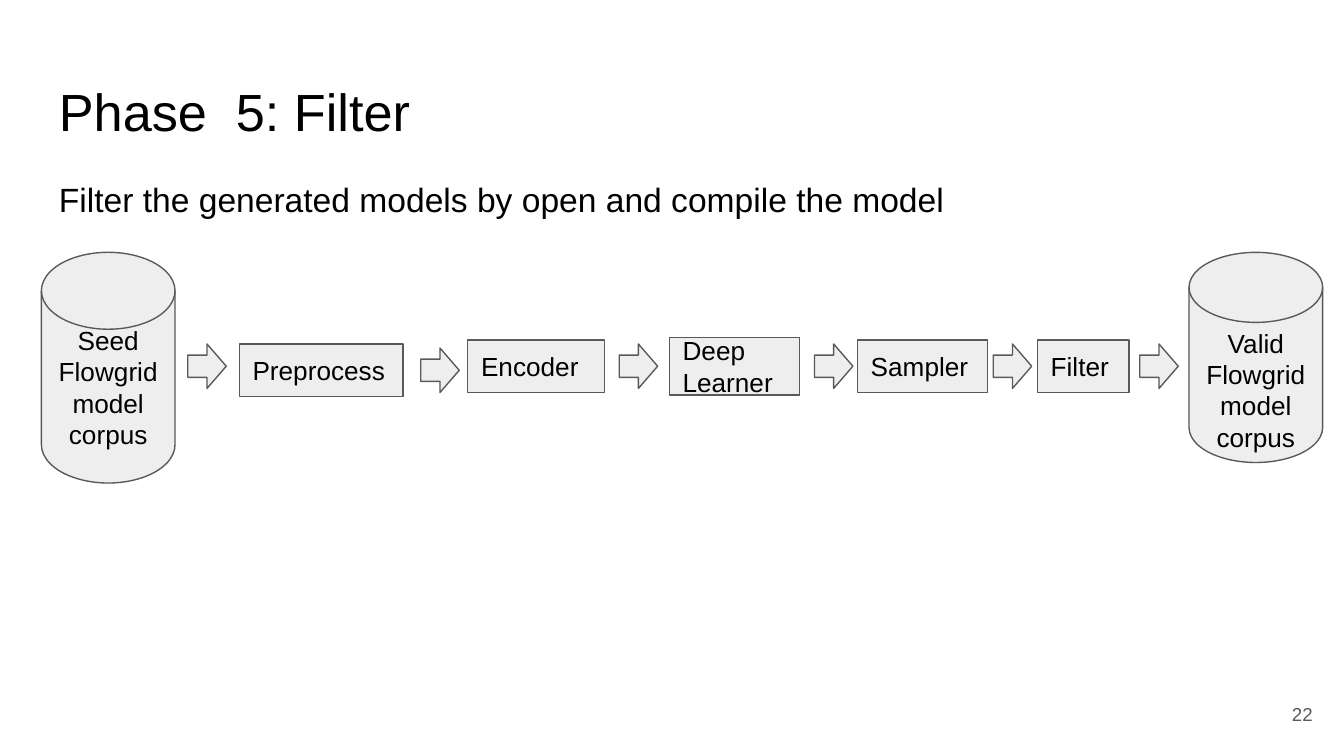
"""Build the Phase 5 filter slide with its pipeline diagram."""
from pptx import Presentation
from pptx.dml.color import RGBColor
from pptx.enum.shapes import MSO_SHAPE
from pptx.enum.text import MSO_ANCHOR, PP_ALIGN
from pptx.util import Pt

BLACK = RGBColor(0x00, 0x00, 0x00)
GRAY = RGBColor(0x59, 0x59, 0x59)
LIGHT_GRAY = RGBColor(0xEE, 0xEE, 0xEE)

FONT = "Arial"
INSET = 7.2
BOX_HEIGHT = 28.1
ARROW_TOP = 184.3

STEPS = [
    ("Preprocess", 128.2, 184.3, 87.8, BOX_HEIGHT),
    ("Encoder", 250.6, 182.2, 73.4, BOX_HEIGHT),
    ("Deep Learner", 358.6, 180.7, 69.8, 31),
    ("Sampler", 459.4, 182.2, 69.8, BOX_HEIGHT),
    ("Filter", 555.8, 182.2, 49, BOX_HEIGHT),
]
ARROWS = [
    (100.6, ARROW_TOP),
    (225.4, 186.5),
    (331.7, ARROW_TOP),
    (436.3, ARROW_TOP),
    (532.1, ARROW_TOP),
    (610.6, ARROW_TOP),
]


def write_text(shape, lines, size, color=BLACK, align=PP_ALIGN.LEFT,
               anchor=MSO_ANCHOR.MIDDLE, top_inset=INSET):
    """Fill a shape with one paragraph per line and return its text frame."""
    frame = shape.text_frame
    frame.word_wrap = True
    frame.vertical_anchor = anchor
    frame.margin_left = frame.margin_right = frame.margin_bottom = Pt(INSET)
    frame.margin_top = Pt(top_inset)
    frame.text = "\n".join(lines)
    for paragraph in frame.paragraphs:
        paragraph.alignment = align
        paragraph.font.name = FONT
        paragraph.font.size = Pt(size)
        paragraph.font.color.rgb = color
    return frame


def add_text(slide, text, left, top, width, height, size, **style):
    """Add a text box holding one line and return its text frame."""
    box = slide.shapes.add_textbox(Pt(left), Pt(top), Pt(width), Pt(height))
    return write_text(box, [text], size, **style)


def add_outlined(slide, kind, left, top, width, height):
    """Add a light gray preset shape with a thin gray outline."""
    shape = slide.shapes.add_shape(kind, Pt(left), Pt(top), Pt(width), Pt(height))
    shape.shadow.inherit = False
    shape.fill.solid()
    shape.fill.fore_color.rgb = LIGHT_GRAY
    shape.line.color.rgb = GRAY
    shape.line.width = Pt(0.75)
    return shape


def add_corpus(slide, first_word, left, height, top_inset=INSET):
    """Add a disk that stands for a corpus of models."""
    disk = add_outlined(slide, MSO_SHAPE.FLOWCHART_MAGNETIC_DISK,
                        left, 135.2, 71.6, height)
    write_text(disk, [first_word, "Flowgrid model corpus"], 14,
               align=PP_ALIGN.CENTER, top_inset=top_inset)


def add_step(slide, label, left, top, width, height):
    """Add one labelled step of the pipeline."""
    box = add_outlined(slide, MSO_SHAPE.RECTANGLE, left, top, width, height)
    write_text(box, [label], 14)


def add_arrow(slide, left, top):
    """Add a block arrow that leads to the next step."""
    add_outlined(slide, MSO_SHAPE.RIGHT_ARROW, left, top, 20.6, 23.8)


def main():
    """Build and save the presentation."""
    presentation = Presentation()
    presentation.slide_width = Pt(720)
    presentation.slide_height = Pt(405)
    slide = presentation.slides.add_slide(presentation.slide_layouts[6])

    add_text(slide, "Phase  5: Filter", 24.5, 35, 671, 45.1, 28,
             anchor=MSO_ANCHOR.TOP)
    body = add_text(slide, "Filter the generated models by open and compile the model",
                    24.5, 85.7, 671, 38.9, 18, anchor=MSO_ANCHOR.TOP)
    body.paragraphs[0].line_spacing = 1.15
    body.paragraphs[0].space_after = Pt(16)
    add_text(slide, "22", 667.1, 367.2, 43.2, 31, 10, color=GRAY,
             align=PP_ALIGN.RIGHT)

    add_corpus(slide, "Seed", 22.2, 123.6)
    for step in STEPS:
        add_step(slide, *step)
    for arrow in ARROWS:
        add_arrow(slide, *arrow)
    add_corpus(slide, "Valid", 637, 112.6, top_inset=INSET + 16)

    presentation.save("out.pptx")


if __name__ == "__main__":
    main()
